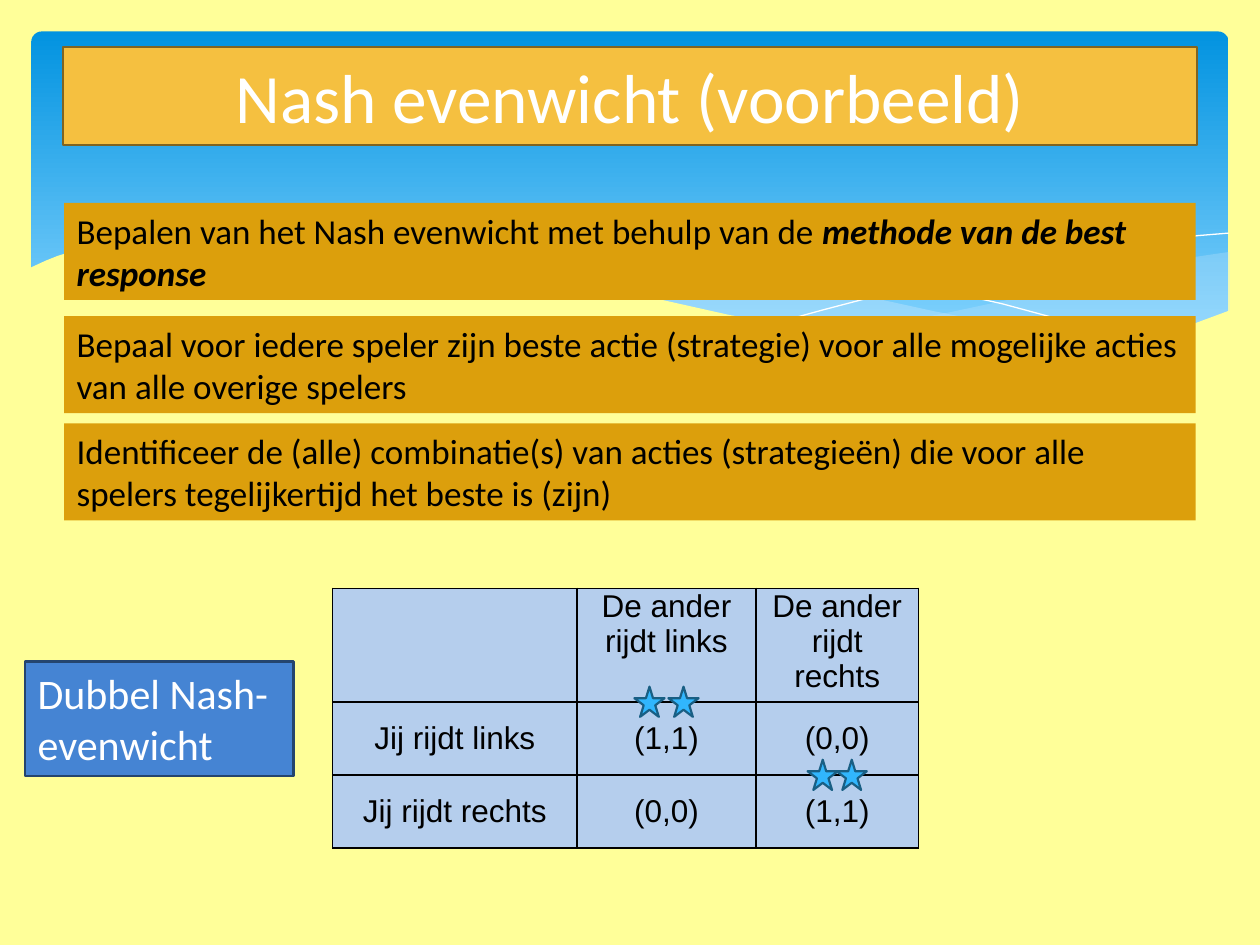
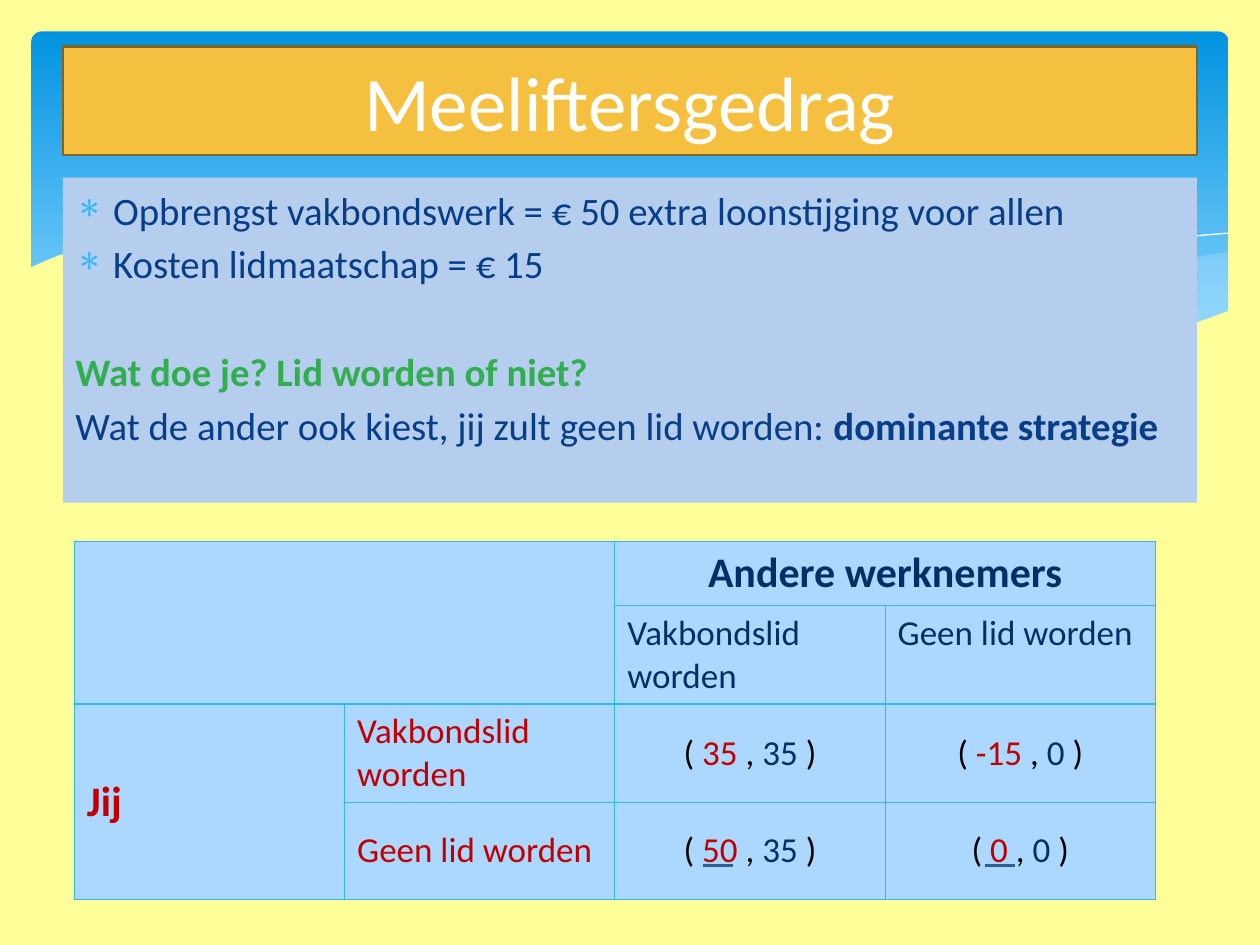
from itertools import product

from lxml import etree
from pptx import Presentation
from pptx.dml.color import RGBColor
from pptx.enum.shapes import MSO_CONNECTOR, MSO_SHAPE
from pptx.enum.text import MSO_ANCHOR, PP_ALIGN
from pptx.oxml.ns import qn
from pptx.table import _Cell
from pptx.util import Emu, Inches, Pt

COLUMNS, ROWS = 100, 75  # square grid cells on the page
CELL = Inches(0.1)

YELLOW, WHITE, BLACK = "FFFF99", "FFFFFF", "000000"
GOLD, GOLD_EDGE, OCHRE = "F5C040", "806421", "DC9F0C"
SKY, SKY_EDGE, PALE_SKY, MIST = "31B6FD", "195F84", "ACD7FE", "C6E7FC"
BLUE, BLUE_EDGE, PALE_BLUE = "4584D3", "24456E", "B5CEED"
NAVY, DARK_NAVY, RED, GREEN = "073E87", "052E65", "C00000", "32AE51"

# Wave outlines, in tenths of a grid cell
RIGHT_SWELL = [
    (975, 200), (948, 204), (921, 210), (891, 216), (861, 223), (805, 237), (753, 248),
    (706, 257), (661, 265), (691, 269), (719, 271), (745, 275), (781, 277), (814, 278),
    (844, 277), (872, 274), (897, 270), (921, 265), (942, 259), (963, 252), (976, 247), (976, 200)]
LONG_SWELL = [
    (893, 273), (866, 269), (807, 260), (741, 247), (668, 231), (629, 222), (584, 211),
    (541, 203), (502, 196), (465, 191), (420, 187), (380, 185), (344, 186), (313, 188),
    (286, 191), (323, 196), (362, 203), (404, 211), (449, 222), (530, 240), (601, 255),
    (650, 264), (695, 270), (736, 275), (773, 277), (807, 278), (848, 277), (876, 275)]
FALLING_CREST = [
    (309, 195), (335, 191), (374, 188), (416, 187), (469, 189), (510, 192), (556, 197),
    (608, 204), (665, 213), (727, 226), (795, 241), (869, 261), (907, 272)]
RISING_CREST = [
    (613, 257), (653, 246), (695, 235), (748, 223), (806, 210), (866, 199), (910, 192),
    (951, 187), (975, 185)]
FOREGROUND = [
    (977, 246), (950, 256), (920, 265), (887, 271), (850, 275), (809, 277), (761, 275),
    (708, 270), (648, 262), (579, 250), (503, 233), (447, 220), (391, 207), (340, 197),
    (292, 190), (250, 186), (211, 184), (177, 184), (146, 185), (119, 187), (95, 191),
    (76, 195), (59, 199), (46, 203), (36, 207), (23, 213), (23, 329), (977, 329)]


def grid(cells):
    return Emu(round(cells * CELL))


def rgb(color):
    return RGBColor.from_string(color)


def paint(shape, fill=None, line=None, width=1.25, opacity=None):
    shape.shadow.inherit = False
    if fill:
        shape.fill.solid()
        shape.fill.fore_color.rgb = rgb(fill)
        if opacity:
            tint = shape.fill._xPr.find(".//" + qn("a:srgbClr"))
            etree.SubElement(tint, qn("a:alpha"), val=str(opacity * 1000))
    else:
        shape.fill.background()
    if line:
        shape.line.color.rgb = rgb(line)
        shape.line.width = Pt(width)
    else:
        shape.line.fill.background()


def write(target, *paras, size=20, color=BLACK, font="Calibri", bold=False,
          align=PP_ALIGN.LEFT, anchor=MSO_ANCHOR.TOP, inset=(1, 0.5)):
    """Fill a shape or cell; a paragraph is a string or a list of (text, changes) spans."""
    frame = target.text_frame
    holder = target if isinstance(target, _Cell) else frame
    holder.margin_left = holder.margin_right = grid(inset[0])
    holder.margin_top = holder.margin_bottom = grid(inset[1])
    holder.vertical_anchor = anchor
    frame.word_wrap = True
    for index, content in enumerate(paras):
        para = frame.add_paragraph() if index else frame.paragraphs[0]
        para.alignment = align
        for words, changes in [(content, {})] if isinstance(content, str) else content:
            span = para.add_run()
            span.text = words
            span.font.name = font
            span.font.size = Pt(size)
            span.font.bold = changes.get("bold", bold)
            span.font.italic = changes.get("italic", False)
            span.font.color.rgb = rgb(changes.get("color", color))
    return frame.paragraphs


def add_box(page, box, fill, line=None, kind=MSO_SHAPE.RECTANGLE):
    shape = page.shapes.add_shape(kind, *map(grid, box))
    paint(shape, fill, line)
    return shape


def add_wave(page, points, closed=True, **look):
    builder = page.shapes.build_freeform(*points[0], scale=CELL / 10)
    builder.add_line_segments(points[1:], close=closed)
    paint(builder.convert_to_shape(), **look)


def add_backdrop(page, long_swell):
    page.background.fill.solid()
    page.background.fill.fore_color.rgb = rgb(YELLOW)
    sky = add_box(page, (2.5, 2.5, COLUMNS - 5, 27), SKY, kind=MSO_SHAPE.ROUNDED_RECTANGLE)
    sky.adjustments[0] = 0.03
    sky.fill.gradient()
    sky.fill.gradient_angle = 270
    for stop, color, position in zip(sky.fill.gradient_stops, ("0293E0", "83D3FE"), (0, 0.9)):
        stop.color.rgb = rgb(color)
        stop.position = position
    add_wave(page, RIGHT_SWELL, fill=MIST, opacity=29)
    if long_swell:
        add_wave(page, LONG_SWELL, fill=MIST, opacity=40)
        add_wave(page, FALLING_CREST, closed=False, line=WHITE, width=0)
    add_wave(page, RISING_CREST, closed=False, line=WHITE, width=0)
    add_wave(page, FOREGROUND, fill=YELLOW)


def add_title(page, title, height, size):
    band = add_box(page, (5, 3.7, COLUMNS - 10, height), GOLD, GOLD_EDGE)
    write(band, title, size=size, color=WHITE, align=PP_ALIGN.CENTER, anchor=MSO_ANCHOR.MIDDLE)


def add_bullet(para, mark, color, indent):
    props = para._p.get_or_add_pPr()
    props.set("marL", str(grid(indent)))
    props.set("indent", str(-grid(indent)))
    tint = etree.SubElement(props, qn("a:buClr"))
    etree.SubElement(tint, qn("a:srgbClr"), val=color)
    etree.SubElement(props, qn("a:buChar"), char=mark)


def add_grid_table(page, left, top, widths, heights, fill, line, width):
    frame = page.shapes.add_table(len(heights), len(widths), grid(left), grid(top),
                                  grid(sum(widths)), grid(sum(heights)))
    table = frame.table
    table.first_row = table.horz_banding = False
    for column, size in zip(table.columns, widths):
        column.width = grid(size)
    for row, size in zip(table.rows, heights):
        row.height = grid(size)
    for cell in table.iter_cells():
        props = cell._tc.get_or_add_tcPr()
        for side in "LRTB":
            edge = etree.SubElement(props, qn(f"a:ln{side}"), w=str(Pt(width)))
            paint_edge = etree.SubElement(edge, qn("a:solidFill"))
            etree.SubElement(paint_edge, qn("a:srgbClr"), val=line)
        cell.fill.solid()
        cell.fill.fore_color.rgb = rgb(fill)
    return table


def add_driving_game(page, left, top):
    """Payoff table with a pair of stars on the top edge of each equilibrium cell."""
    widths, heights = (19.4, 14.2, 12.9), (9, 5.8, 5.8)
    table = add_grid_table(page, left, top, widths, heights, PALE_BLUE, BLACK, 1)
    texts = [[(), ("De ander rijdt links",), ("De ander", "rijdt rechts")],
             [("Jij rijdt links",), ("(1,1)",), ("(0,0)",)],
             [("Jij rijdt rechts",), ("(0,0)",), ("(1,1)",)]]
    for row, column in product(range(3), range(3)):
        write(table.cell(row, column), *texts[row][column], size=18, font="Arial",
              align=PP_ALIGN.CENTER, inset=(0.7, 0),
              anchor=MSO_ANCHOR.MIDDLE if row else MSO_ANCHOR.TOP)
    star = 2.4
    for index, step in ((1, 2.7), (2, 2.3)):
        middle = left + sum(widths[:index]) + widths[index] / 2
        edge = top + sum(heights[:index])
        for side in (-1, 1):
            add_box(page, (middle + side * step / 2 - star / 2, edge - star / 2, star, star),
                    SKY, SKY_EDGE, MSO_SHAPE.STAR_5_POINT)


def add_union_game(page, left, top):
    """Payoff table with merged headings and underlined best responses."""
    widths, heights = (21.45,) * 4, (5, 7.8, 7.7, 7.7)
    table = add_grid_table(page, left, top, widths, heights, PALE_SKY, SKY, 0.75)
    for first, last in (((0, 0), (1, 1)), ((0, 2), (0, 3)), ((2, 0), (3, 0))):
        table.cell(*first).merge(table.cell(*last))
    write(table.cell(0, 2), "Andere werknemers", size=24, color=DARK_NAVY, bold=True,
          align=PP_ALIGN.CENTER)
    write(table.cell(2, 0), "Jij", size=24, color=RED, bold=True, anchor=MSO_ANCHOR.MIDDLE)
    payoffs = ((("35", "35"), ("-15", "0")), (("50", "35"), ("0", "0")))
    for index, choice in enumerate(("Vakbondslid worden", "Geen lid worden")):
        write(table.cell(1, 2 + index), choice, color=DARK_NAVY)
        write(table.cell(2 + index, 1), choice, color=RED, anchor=MSO_ANCHOR.MIDDLE)
        for column, (mine, theirs) in enumerate(payoffs[index], 2):
            spans = [("( ", {}), (f"{mine} ", {"color": RED}), (", ", {}),
                     (f"{theirs} ", {"color": DARK_NAVY}), (")", {})]
            write(table.cell(2 + index, column), spans, align=PP_ALIGN.CENTER,
                  anchor=MSO_ANCHOR.MIDDLE)
    height = top + sum(heights[:3]) + 5.2
    for column, offset in ((2, 7), (3, 7.9)):
        start = left + sum(widths[:column]) + offset
        rule = page.shapes.add_connector(MSO_CONNECTOR.STRAIGHT, grid(start), grid(height),
                                         grid(start + 2.4), grid(height))
        rule.line.color.rgb = rgb("315D95")
        rule.line.width = Pt(1.25)
        etree.SubElement(rule._element.spPr, qn("a:effectLst"))


def build_nash_page(page):
    add_backdrop(page, long_swell=True)
    add_title(page, "Nash evenwicht (voorbeeld)", height=7.8, size=39.6)
    steps = [
        (16.1, [("Bepalen van het Nash evenwicht met behulp van de ", {}),
                ("methode van de best response", {"bold": True, "italic": True})]),
        (25.1, "Bepaal voor iedere speler zijn beste actie (strategie) voor alle "
               "mogelijke acties van alle overige spelers"),
        (33.6, "Identificeer de (alle) combinatie(s) van acties (strategieën) die voor "
               "alle spelers tegelijkertijd het beste is (zijn)")]
    for top, step in steps:
        write(add_box(page, (5.1, top, 89.8, 7.7), OCHRE), step)
    add_driving_game(page, left=26.4, top=46.7)
    label = add_box(page, (2, 52.5, 21.3, 9.1), BLUE, BLUE_EDGE)
    write(label, "Dubbel Nash-evenwicht", size=24, color=WHITE)


def build_free_rider_page(page):
    add_backdrop(page, long_swell=False)
    add_title(page, "Meeliftersgedrag", height=8.6, size=44)
    body = add_box(page, (5, 14.1, COLUMNS - 10, 25.8), PALE_BLUE)
    paras = write(
        body,
        "Opbrengst vakbondswerk = € 50 extra loonstijging voor allen",
        "Kosten lidmaatschap = € 15",
        [("Wat doe je? Lid worden of niet?", {"color": GREEN, "bold": True})],
        [("Wat de ander ook kiest, jij zult geen lid worden: ", {}),
         ("dominante strategie", {"bold": True})],
        size=22.2, color=NAVY, inset=(1, 0.7))
    for para, gap in zip(paras[1:], (4, 35, 4)):
        para.space_before = Pt(gap)
    for para in paras[:2]:
        add_bullet(para, "∗", SKY, indent=3)
    add_union_game(page, left=5.9, top=43)


def main():
    deck = Presentation()
    deck.slide_width, deck.slide_height = grid(COLUMNS), grid(ROWS)
    for build in (build_nash_page, build_free_rider_page):
        build(deck.slides.add_slide(deck.slide_layouts[6]))
    deck.save("out.pptx")


if __name__ == "__main__":
    main()
